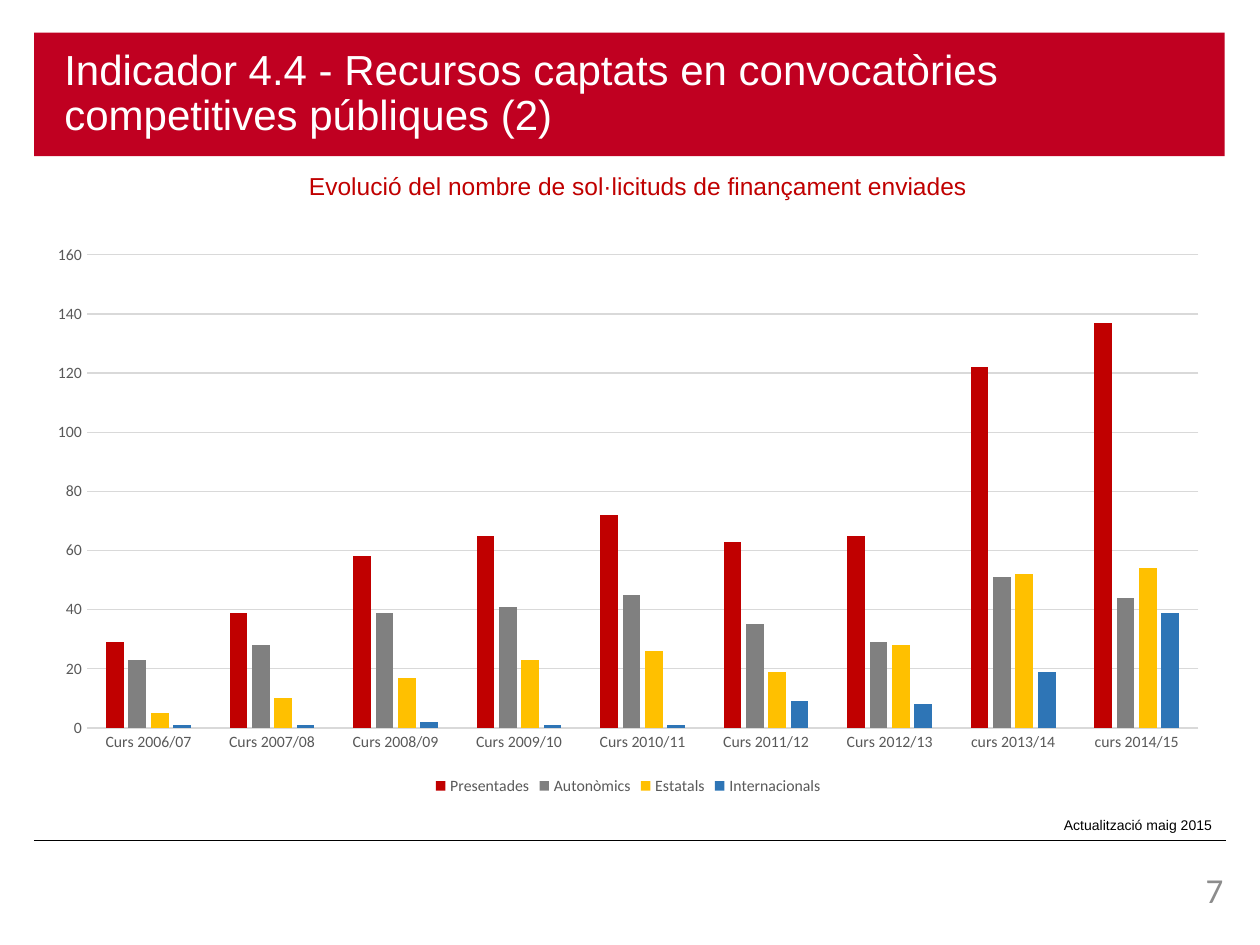
from lxml import etree
from pptx import Presentation
from pptx import util as u
from pptx.chart.data import CategoryChartData
from pptx.dml.color import RGBColor
from pptx.enum import chart as ch, shapes, text
from pptx.oxml.ns import qn

CRIMSON = RGBColor(0xC0, 0x00, 0x21)
RED = RGBColor(0xC0, 0x00, 0x00)
GREY = RGBColor(0x80, 0x80, 0x80)
AMBER = RGBColor(0xFF, 0xC0, 0x00)
BLUE = RGBColor(0x2E, 0x75, 0xB6)
WHITE = RGBColor(0xFF, 0xFF, 0xFF)
BLACK = RGBColor(0, 0, 0)
AXIS_TEXT = RGBColor(0x59, 0x59, 0x59)
GRID = RGBColor(0xD9, 0xD9, 0xD9)
NUMBER_GREY = RGBColor(0x8C, 0x8C, 0x8C)

# Content
TITLE = "Indicador 4.4 - Recursos captats en convocatòries competitives públiques (2)"
COURSES = [f"{'Curs' if year < 2013 else 'curs'} {year}/{year - 1999:02d}"
           for year in range(2006, 2015)]
REQUESTS = [
    ("Presentades", RED, (29, 39, 58, 65, 72, 63, 65, 122, 137)),
    ("Autonòmics", GREY, (23, 28, 39, 41, 45, 35, 29, 51, 44)),
    ("Estatals", AMBER, (5, 10, 17, 23, 26, 19, 28, 52, 54)),
    ("Internacionals", BLUE, (1, 1, 2, 1, 1, 9, 8, 19, 39)),
]
LEFT, CENTER, RIGHT = text.PP_ALIGN.LEFT, text.PP_ALIGN.CENTER, text.PP_ALIGN.RIGHT
INSETS = (0.1, 0.05, 0.1, 0.05)
# words, (left, top, width, height), insets, alignment, font
LABELS = [
    ("Evolució del nombre de sol·licituds de finançament enviades",
     (2.03, 1.31, 6.07, 0.34), INSETS, CENTER, ("Arial", 14, RED)),
    ("Actualització maig 2015",
     (8.07, 6.43, 1.65, 0.24), INSETS, RIGHT, ("Arial", 8, BLACK)),
    ("7", (8.98, 6.89, 0.73, 0.4), (0, 0, 0, 0), RIGHT, ("Calibri", 20, NUMBER_GREY)),
]
WIDTH, HEIGHT, MARGIN = 10, 7.5, 0.27


def inches(values):
    return [u.Inches(value) for value in values]


def set_font(font, name, size, color):
    for key, value in {"name": name, "size": u.Pt(size), "bold": False}.items():
        setattr(font, key, value)
    font.color.rgb = color


def write(shape, words, box, insets, align, font):
    shape.left, shape.top, shape.width, shape.height = inches(box)
    frame = shape.text_frame
    sides = ("margin_left", "margin_top", "margin_right", "margin_bottom")
    for side, inset in zip(sides, inches(insets)):
        setattr(frame, side, inset)
    frame.word_wrap = True
    frame.text = words
    paragraph = frame.paragraphs[0]
    paragraph.alignment = align
    set_font(paragraph.runs[0].font, *font)
    return frame


prs = Presentation()
prs.slide_width, prs.slide_height = inches((WIDTH, HEIGHT))
slide = prs.slides.add_slide(prs.slide_layouts[5])

# Footer rule
rule = slide.shapes.add_connector(
    shapes.MSO_CONNECTOR.STRAIGHT, *inches((MARGIN, 6.67, WIDTH - MARGIN, 6.67)))
rule.line.color.rgb = BLACK
rule.line.width = u.Pt(0.5)
etree.SubElement(rule._element.spPr, qn("a:effectLst"))

# Title band
band = slide.shapes.title
band.fill.solid()
band.fill.fore_color.rgb = CRIMSON
heading = write(band, TITLE, (MARGIN, 0.26, 9.45, 0.98), (0.24, 0.05, 0.1, 0.05),
                LEFT, ("Arial", 24, WHITE))
heading.vertical_anchor = text.MSO_ANCHOR.MIDDLE
heading.auto_size = text.MSO_AUTO_SIZE.NONE
heading.paragraphs[0].line_spacing = 0.9

# Subtitle, update note and page number
for words, box, insets, align, font in LABELS:
    write(slide.shapes.add_textbox(0, 0, 0, 0), words, box, insets, align, font)

# Chart
data = CategoryChartData()
data.categories = COURSES
for name, _, values in REQUESTS:
    data.add_series(name, values)
chart = slide.shapes.add_chart(
    ch.XL_CHART_TYPE.COLUMN_CLUSTERED, *inches((MARGIN, 1.86, 9.43, 4.49)), data).chart
set_font(chart.font, "Calibri", 10, BLACK)
chart.has_title = False

columns = chart.plots[0]
columns.gap_width, columns.overlap = 219, -27
columns.vary_by_categories = False
for series, (_, color, _) in zip(columns.series, REQUESTS):
    series.format.fill.solid()
    series.format.fill.fore_color.rgb = color
    series.invert_if_negative = False

chart.has_legend = True
chart.legend.position = ch.XL_LEGEND_POSITION.BOTTOM
chart.legend.include_in_layout = False
set_font(chart.legend.font, "Calibri", 9, AXIS_TEXT)

courses, counts = chart.category_axis, chart.value_axis
for axis in (courses, counts):
    axis.major_tick_mark = axis.minor_tick_mark = ch.XL_TICK_MARK.NONE
    set_font(axis.tick_labels.font, "Calibri", 9, AXIS_TEXT)
counts.minimum_scale, counts.maximum_scale, counts.major_unit = 0, 160, 20
counts.format.line.fill.background()
counts.has_major_gridlines = True
for line in (courses.format.line, counts.major_gridlines.format.line):
    line.color.rgb = GRID
    line.width = u.Pt(0.75)

prs.save("out.pptx")
